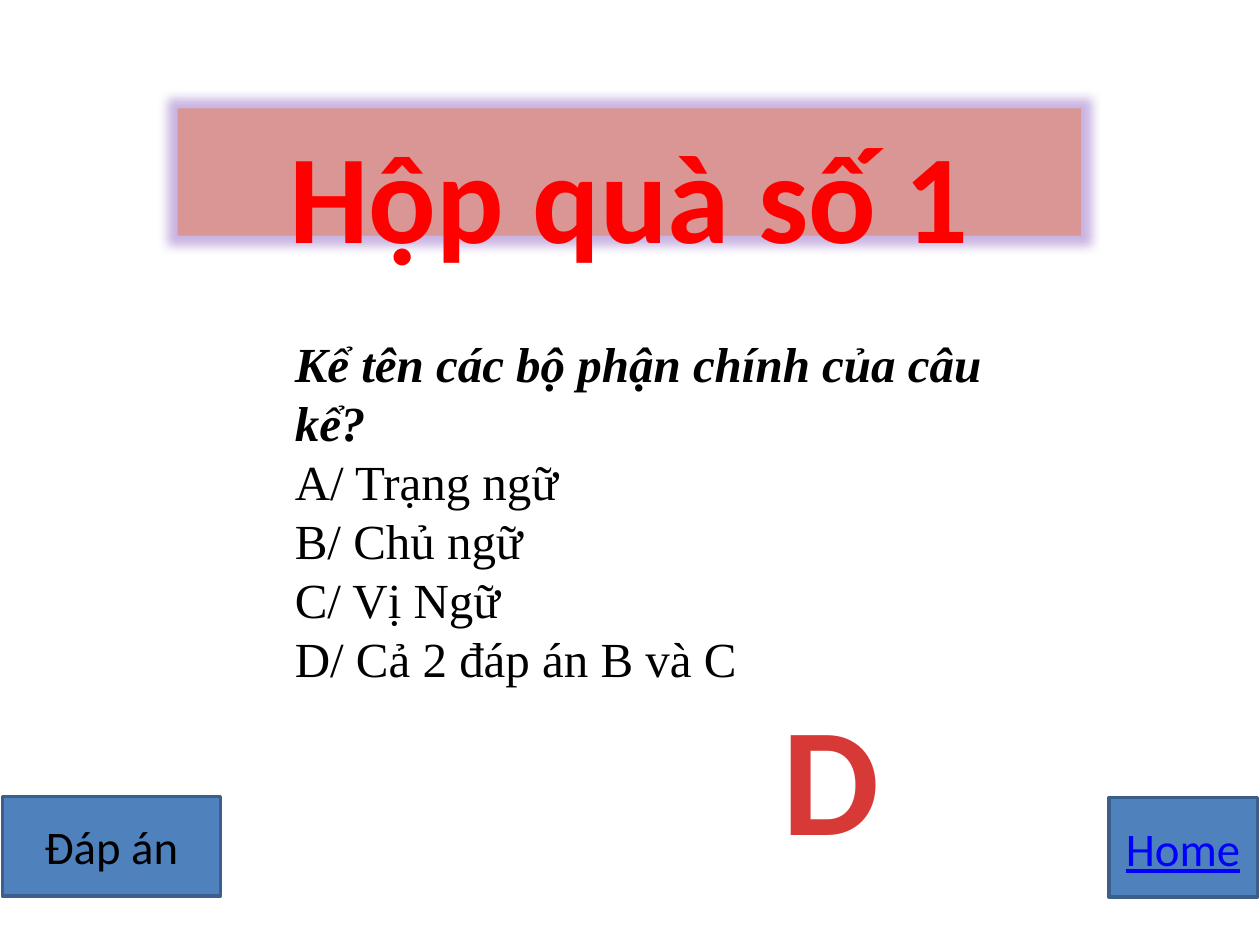
import pptx
import pptx.util
import pptx.dml.color
import pptx.enum.shapes
import pptx.enum.text
import pptx.oxml
import pptx.oxml.ns
from pptx.util import Inches

ALIGN = pptx.enum.text.PP_ALIGN
ANCHOR = pptx.enum.text.MSO_ANCHOR
NS = pptx.oxml.ns.nsdecls("a")


def rgb(value):
    return pptx.dml.color.RGBColor.from_string(value)


def place(s, box):
    s.left, s.top, s.width, s.height = [Inches(v) for v in box]


def format_frame(tf, **values):
    for name, value in values.items():
        setattr(tf, name, value)


def write(p, text, size, color, name="Calibri", align=ALIGN.CENTER, **values):
    p.alignment = align
    r = p.add_run()
    r.text = text
    r.font.color.rgb = rgb(color)
    font = {"size": pptx.util.Pt(size), "name": name, **values}
    for key, value in font.items():
        setattr(r.font, key, value)
    return r


def outline(r, color):
    """Draw a thin line round the letters of a run."""
    r.font._element.insert(0, pptx.oxml.parse_xml(
        f'<a:ln {NS} w="17780"><a:solidFill><a:srgbClr val="{color}"/></a:solidFill></a:ln>'))


def add_glow(s, color, radius, opacity):
    s._element.spPr.append(pptx.oxml.parse_xml(
        f'<a:effectLst {NS}><a:glow rad="{pptx.util.Pt(radius)}"><a:srgbClr val="{color}">'
        f'<a:alpha val="{opacity * 1000}"/></a:srgbClr></a:glow></a:effectLst>'))


def big_text_frame(s, anchor):
    tf = s.text_frame
    format_frame(tf, word_wrap=False, vertical_anchor=anchor,
                 margin_left=Inches(0.13), margin_right=Inches(0.13),
                 margin_top=Inches(0.07), margin_bottom=Inches(0.07),
                 auto_size=pptx.enum.text.MSO_AUTO_SIZE.NONE)
    return tf


def fill_heading(s, box, text):
    place(s, box)
    s.fill.solid()
    s.fill.fore_color.rgb = rgb("D99694")
    add_glow(s, "7844B6", 11, 40)
    tf = big_text_frame(s, ANCHOR.TOP)
    outline(write(tf.paragraphs[0], text, 72, "FF0000", bold=True), "FFFFFF")


def fill_question(s, box, question, answers):
    place(s, box)
    tf = s.text_frame
    format_frame(tf, word_wrap=True, vertical_anchor=ANCHOR.TOP,
                 auto_size=pptx.enum.text.MSO_AUTO_SIZE.NONE)
    for i, text in enumerate([question, *answers]):
        p = tf.paragraphs[0] if i == 0 else tf.add_paragraph()
        pPr = p._p.get_or_add_pPr()
        pPr.set("marL", "0")
        pPr.set("indent", "0")
        pPr.append(pptx.oxml.parse_xml(f"<a:buNone {NS}/>"))
        p.space_before = pptx.util.Pt(0)
        write(p, text, 28, "000000", "Times New Roman", ALIGN.LEFT,
              bold=i == 0, italic=i == 0)


def add_answer(slide, box, text):
    s = slide.shapes.add_textbox(*[Inches(v) for v in box])
    tf = big_text_frame(s, ANCHOR.TOP)
    outline(write(tf.paragraphs[0], text, 88, "D73A36", bold=True), "D73A36")


def add_button(slide, box, text, color, underline=False):
    s = slide.shapes.add_shape(pptx.enum.shapes.MSO_SHAPE.RECTANGLE,
                               *[Inches(v) for v in box])
    s.shadow.inherit = False
    s.fill.solid()
    s.fill.fore_color.rgb = rgb("4F81BD")
    s.line.color.rgb = rgb("3A5F8C")
    s.line.width = pptx.util.Pt(2)
    s.text_frame.vertical_anchor = ANCHOR.MIDDLE
    write(s.text_frame.paragraphs[0], text, 26.7, color, underline=underline)


def main():
    prs = pptx.Presentation()
    prs.slide_width, prs.slide_height = Inches(10), Inches(7.5)
    slide = prs.slides.add_slide(prs.slide_layouts[1])
    title, body = slide.placeholders
    fill_heading(title, (1.41, 0.86, 7.17, 1.01), "Hộp quà số 1")
    fill_question(body, (2.24, 2.6, 5.83, 2.93), "Kể tên các bộ phận chính của câu kể?",
                  ["A/ Trạng ngữ", "B/ Chủ ngữ", "C/ Vị Ngữ", "D/ Cả 2 đáp án B và C"])
    add_answer(slide, (6.07, 5.34, 1.05, 1.62), "D")
    add_button(slide, (0.02, 6.32, 1.73, 0.79), "Đáp án", "000000")
    add_button(slide, (8.8, 6.33, 1.18, 0.79), "Home", "0000FF", underline=True)
    prs.save("out.pptx")


if __name__ == "__main__":
    main()
